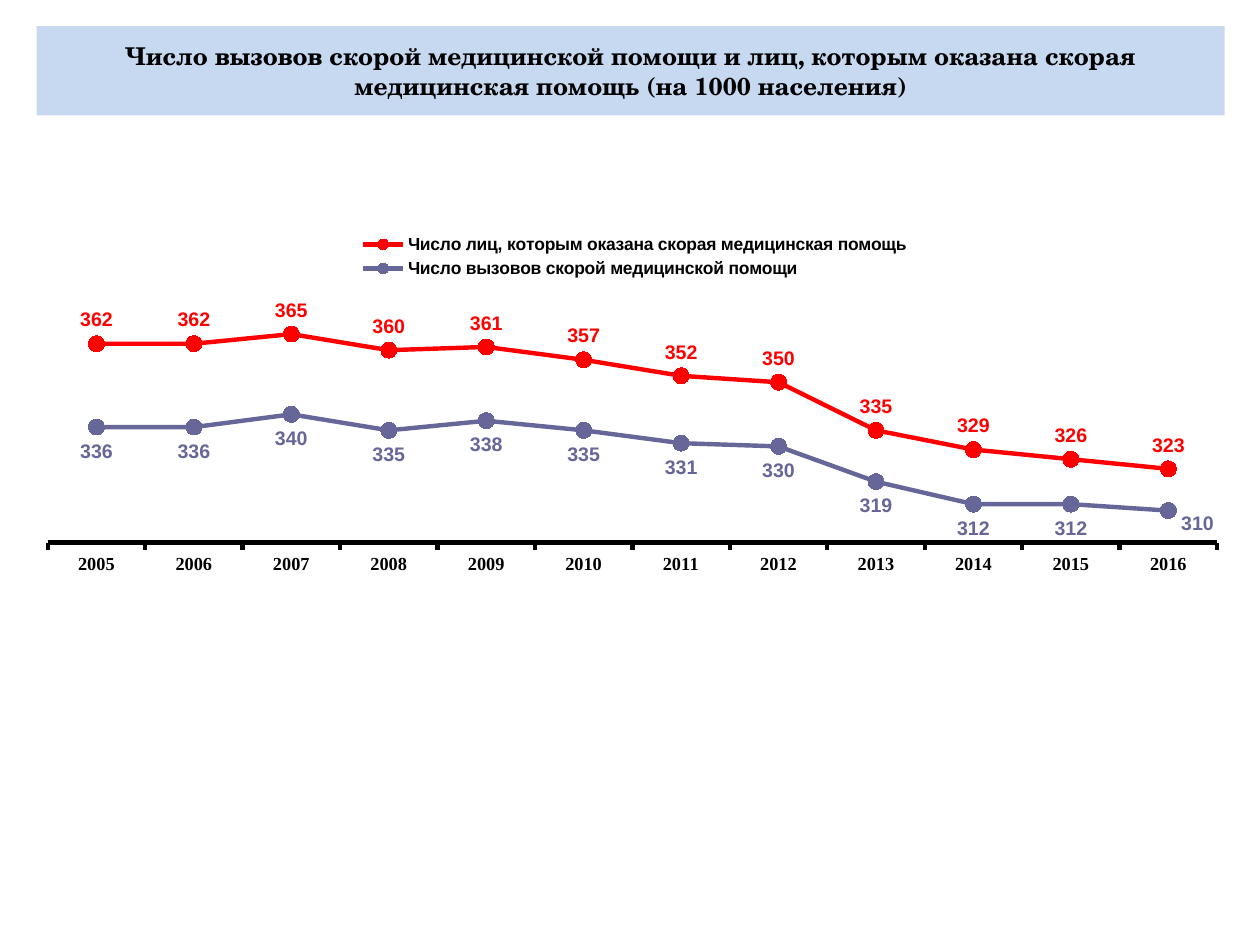
from lxml import etree
from pptx import Presentation
from pptx.chart.data import CategoryChartData
from pptx.dml.color import RGBColor
from pptx.enum.chart import (XL_CHART_TYPE, XL_LABEL_POSITION, XL_LEGEND_POSITION,
                             XL_MARKER_STYLE, XL_TICK_LABEL_POSITION, XL_TICK_MARK)
from pptx.enum.shapes import MSO_SHAPE
from pptx.enum.text import MSO_ANCHOR, PP_ALIGN
from pptx.oxml.ns import qn
from pptx.util import Cm, Pt

LINE_MARKERS = XL_CHART_TYPE.LINE_MARKERS
ABOVE, BELOW, RIGHT = XL_LABEL_POSITION.ABOVE, XL_LABEL_POSITION.BELOW, XL_LABEL_POSITION.RIGHT
CIRCLE = XL_MARKER_STYLE.CIRCLE
BLACK, RED, VIOLET, PALE_BLUE = "000000", "FF0000", "666699", "C6D9F1"


def color(value):
    return RGBColor.from_string(value)


def set_font(font, name, size, value):
    font.name = name
    font.size = Pt(size)
    font.bold = True
    font.color.rgb = color(value)


def set_layout(parent, index, **settings):
    """Place a chart part by hand, as fractions of the chart."""
    for old in parent.findall(qn("c:layout")):
        parent.remove(old)
    layout = etree.Element(qn("c:layout"))
    manual = etree.SubElement(layout, qn("c:manualLayout"))
    for tag, value in settings.items():
        etree.SubElement(manual, qn("c:" + tag)).set("val", str(value))
    parent.insert(index, layout)


deck = Presentation()
deck.slide_width, deck.slide_height = Cm(25.4), Cm(19.05)
page = deck.slides.add_slide(deck.slide_layouts[6])

# Title band
band = page.shapes.add_shape(MSO_SHAPE.RECTANGLE, Cm(0.74), Cm(0.53), Cm(23.95), Cm(1.8))
band.shadow.inherit = False
band.fill.solid()
band.fill.fore_color.rgb = color(PALE_BLUE)
band.line.fill.background()
frame = band.text_frame
frame.word_wrap = True
frame.vertical_anchor = MSO_ANCHOR.MIDDLE
frame.text = ("Число вызовов скорой медицинской помощи и лиц, которым оказана "
              "скорая медицинская помощь (на 1000 населения)")
para = frame.paragraphs[0]
para.alignment = PP_ALIGN.CENTER
set_font(para.runs[0].font, "TeX Gyre Schola", 14, BLACK)

# Line chart
lines = [
    ("Число лиц, которым оказана скорая медицинская помощь", RED, ABOVE,
     [362, 362, 365, 360, 361, 357, 352, 350, 335, 329, 326, 323]),
    ("Число вызовов скорой медицинской помощи", VIOLET, BELOW,
     [336, 336, 340, 335, 338, 335, 331, 330, 319, 312, 312, 310]),
]
data = CategoryChartData()
data.categories = [str(year) for year in range(2005, 2017)]
for name, _, _, values in lines:
    data.add_series(name, values)
chart = page.shapes.add_chart(LINE_MARKERS, Cm(0.58), Cm(4.11), Cm(24), Cm(8.84), data).chart
chart.has_title = False
set_font(chart.font, "Arial", 14.3, BLACK)
plot = chart.plots[0]
plot.vary_by_categories = False
set_layout(chart._chartSpace.chart.plotArea, 0, layoutTarget="inner", xMode="edge",
           yMode="edge", x=0.016, y=0.041, w=0.984, h=0.732)

# Series lines, markers and value labels
for series, (_, tint, position, _) in zip(plot.series, lines):
    series.smooth = False
    series.format.line.color.rgb = color(tint)
    series.format.line.width = Pt(2.53)
    series.marker.style = CIRCLE
    series.marker.size = 9
    series.marker.format.fill.solid()
    series.marker.format.fill.fore_color.rgb = color(tint)
    series.marker.format.line.color.rgb = color(tint)
    labels = series.data_labels
    labels.show_value = True
    labels.position = position
    set_font(labels.font, "Arial", 11.2, tint)

# The last lower label sits to the right, slightly below its point
last_label = plot.series[1].points[11].data_label
set_font(last_label.font, "Arial", 11.2, VIOLET)
last_label.position = RIGHT
set_layout(plot.series[1].data_labels._element.find(qn("c:dLbl")), 1, x=0, y=0.03)

# Axes
years = chart.category_axis
years.major_tick_mark = XL_TICK_MARK.OUTSIDE
years.minor_tick_mark = XL_TICK_MARK.NONE
years.tick_label_position = XL_TICK_LABEL_POSITION.LOW
years.has_major_gridlines = False
years.format.line.color.rgb = color(BLACK)
years.format.line.width = Pt(2.53)
set_font(years.tick_labels.font, "Times New Roman", 10.5, BLACK)
scale = chart.value_axis
scale.minimum_scale, scale.maximum_scale, scale.major_unit = 300, 400, 10
scale.has_major_gridlines = False
scale.visible = False

# Legend
chart.has_legend = True
legend = chart.legend
legend.position = XL_LEGEND_POSITION.RIGHT
legend.include_in_layout = False
set_font(legend.font, "Arial", 10, BLACK)
set_layout(legend._element, 1, xMode="edge", yMode="edge", x=0.27, y=0.06, w=0.48, h=0.12)

deck.save("out.pptx")
